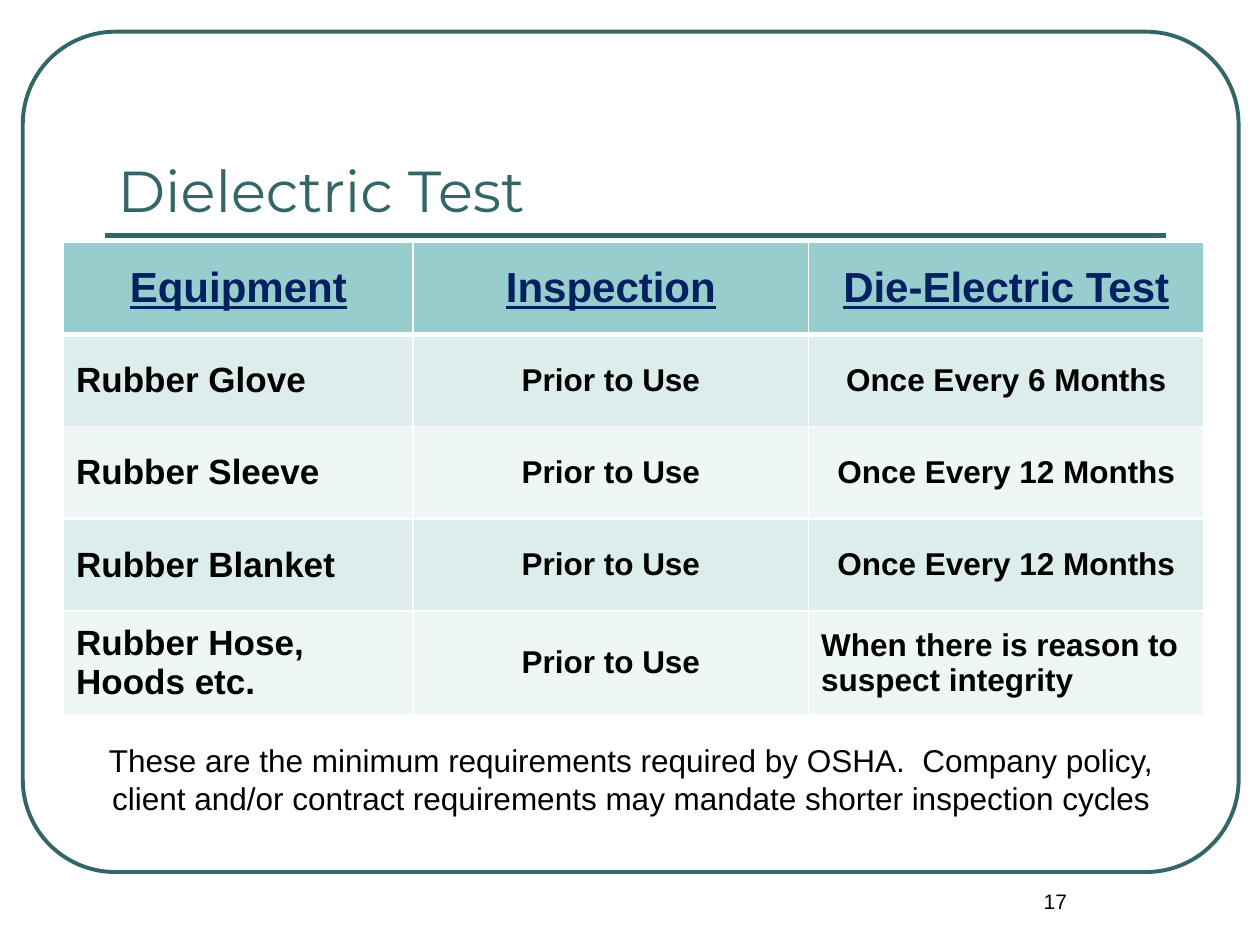
from lxml.etree import SubElement as Sub
from pptx import Presentation
from pptx.dml.color import RGBColor as Rgb
from pptx.enum.shapes import MSO_CONNECTOR as Link, MSO_SHAPE as Shape
from pptx.enum.text import MSO_ANCHOR as Anchor, PP_ALIGN as Align
from pptx.oxml.ns import qn
from pptx.util import Cm, Pt

COLOURS = {
    "teal": "336666",
    "navy": "002060",
    "black": "000000",
    "white": "FFFFFF",
    "header": "97CDCC",
    "odd": "DDEDEC",
    "even": "EFF6F6",
}
ROWS = [
    ("Equipment", "Inspection", "Die-Electric Test"),
    ("Rubber Glove", "Prior to Use", "Once Every 6 Months"),
    ("Rubber Sleeve", "Prior to Use", "Once Every 12 Months"),
    ("Rubber Blanket", "Prior to Use", "Once Every 12 Months"),
    ("Rubber Hose, Hoods etc.", "Prior to Use", "When there is reason to suspect integrity"),
]


class SlideBuilder:
    """Hold the style and the current slide, and draw each kind of element."""

    def __init__(self, page):
        self.page = page
        self.body_font = "Arial"
        self.title_font = "Montserrat"

    def colour(self, name):
        return Rgb.from_string(COLOURS[name])

    def fill_text(self, frame, text, size, colour="black", align=Align.LEFT, font=None, bold=False, underline=False):
        frame.text = text
        frame.word_wrap = True
        para = frame.paragraphs[0]
        para.alignment = align
        for span in para.runs:
            span.font.name = font or self.body_font
            span.font.size = Pt(size)
            span.font.bold = bold
            span.font.underline = underline
            span.font.color.rgb = self.colour(colour)

    def frame(self, left, top, width, height):
        box = self.page.shapes.add_shape(Shape.ROUNDED_RECTANGLE, Cm(left), Cm(top), Cm(width), Cm(height))
        box.adjustments[0] = 0.11
        box.shadow.inherit = False
        box.fill.background()
        box.line.color.rgb = self.colour("teal")
        box.line.width = Pt(2.25)

    def rule(self, left, right, top):
        line = self.page.shapes.add_connector(Link.STRAIGHT, Cm(left), Cm(top), Cm(right), Cm(top))
        line.line.color.rgb = self.colour("teal")
        line.line.width = Pt(3)
        Sub(line._element.spPr, qn("a:effectLst"))

    def text(self, left, top, width, height, text, size, anchor=Anchor.TOP, **style):
        box = self.page.shapes.add_textbox(Cm(left), Cm(top), Cm(width), Cm(height))
        self.fill_text(box.text_frame, text, size, **style)
        box.text_frame.vertical_anchor = anchor

    def border(self, cell, widths):
        for side, width in zip("LRTB", widths):
            edge = Sub(cell._tc.get_or_add_tcPr(), qn(f"a:ln{side}"), w=str(Pt(width)))
            Sub(Sub(edge, qn("a:solidFill")), qn("a:srgbClr"), val=COLOURS["white"])

    def cell(self, cell, text, row, column):
        header, last = row == 0, row == len(ROWS) - 1
        centred = header or (column > 0 and not (last and column == 2))
        self.fill_text(
            cell.text_frame,
            text,
            24 if header else 18 if column else 20,
            colour="navy" if header else "black",
            align=Align.CENTER if centred else Align.LEFT,
            bold=True,
            underline=header,
        )
        cell.vertical_anchor = Anchor.MIDDLE
        self.border(cell, (1, 1, 3 if row == 1 else 1, 3 if header else 1))
        cell.fill.solid()
        cell.fill.fore_color.rgb = self.colour("header" if header else "odd" if row % 2 else "even")

    def table(self, left, top, widths, heights, rows):
        holder = self.page.shapes.add_table(
            len(rows), len(widths), Cm(left), Cm(top), Cm(sum(widths)), Cm(sum(heights))
        )
        grid = holder.table
        for column, width in zip(grid.columns, widths):
            column.width = Cm(width)
        for index, (height, texts) in enumerate(zip(heights, rows)):
            grid.rows[index].height = Cm(height)
            for column, text in enumerate(texts):
                self.cell(grid.cell(index, column), text, index, column)


def main():
    deck = Presentation()
    deck.slide_width, deck.slide_height = Cm(25.4), Cm(19.05)
    builder = SlideBuilder(deck.slides.add_slide(deck.slide_layouts[6]))
    builder.frame(0.46, 0.64, 24.51, 16.94)
    builder.rule(2.12, 23.5, 4.75)
    builder.text(
        2.12, 1.48, 21.38, 3.17, "Dielectric Test", 33,
        anchor=Anchor.BOTTOM, colour="teal", font=builder.title_font,
    )
    builder.table(1.28, 4.88, [7.05, 7.97, 7.97], [1.86] * 4 + [2.08], ROWS)
    builder.text(
        1.93, 14.81, 21.59, 1.8,
        "These are the minimum requirements required by OSHA.  Company policy, "
        "client and/or contract requirements may mandate shorter inspection cycles",
        18, align=Align.CENTER,
    )
    builder.text(19.05, 17.78, 4.45, 1.27, "17", 12, align=Align.CENTER)
    deck.save("out.pptx")


if __name__ == "__main__":
    main()
